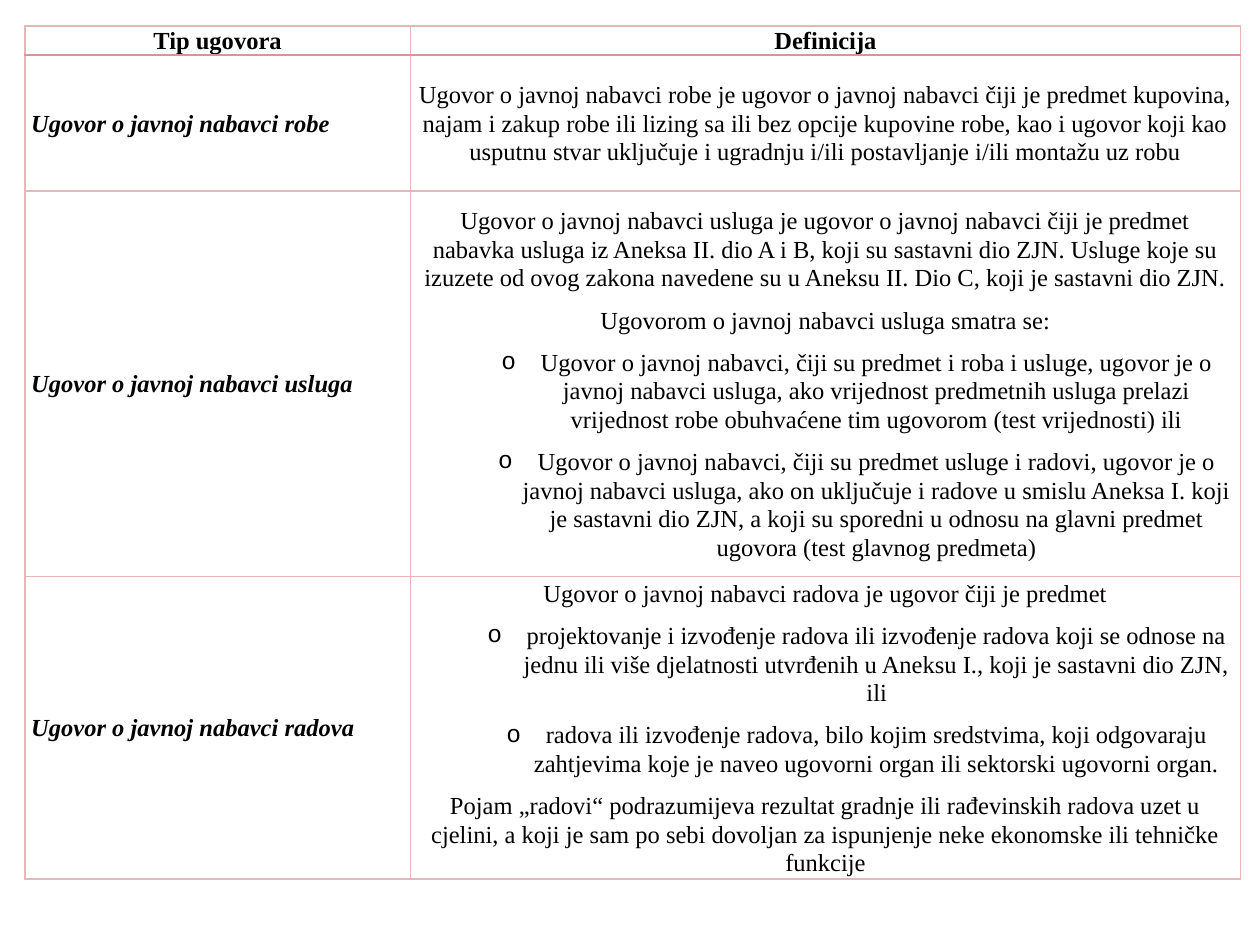
from lxml import etree
from pptx import Presentation
from pptx.dml.color import RGBColor
from pptx.enum import text
from pptx.oxml.ns import qn
from pptx.util import Pt

FONT = "Times New Roman"
BULLET_FONT = "Courier New"
PINK, ROSE, BLACK = "E5B8B7", "D99594", "000000"
COLUMN_WIDTHS = [220.3, 474.5]
ROW_HEIGHTS = [16.5, 77.8, 220.3, 172.8]
HEADINGS = ["Tip ugovora", "Definicija"]

# Each contract type has definition paragraphs: (is bulleted, wording).
CONTRACTS = [
    ("Ugovor o javnoj nabavci robe", [
        (False, "Ugovor o javnoj nabavci robe je ugovor o javnoj nabavci čiji je predmet kupovina, "
                "najam i zakup robe ili lizing sa ili bez opcije kupovine robe, kao i ugovor koji kao "
                "usputnu stvar uključuje i ugradnju i/ili postavljanje i/ili montažu uz robu"),
    ]),
    ("Ugovor o javnoj nabavci usluga", [
        (False, "Ugovor o javnoj nabavci usluga je ugovor o javnoj nabavci čiji je predmet nabavka "
                "usluga iz Aneksa II. dio A i B, koji su sastavni dio ZJN. Usluge koje su izuzete od "
                "ovog zakona navedene su u Aneksu II. Dio C, koji je sastavni dio ZJN."),
        (False, "Ugovorom o javnoj nabavci usluga smatra se:"),
        (True, "Ugovor o javnoj nabavci, čiji su predmet i roba i usluge, ugovor je o "
               "javnoj nabavci usluga, ako vrijednost predmetnih usluga prelazi "
               "vrijednost robe obuhvaćene tim ugovorom (test vrijednosti) ili"),
        (True, "Ugovor o javnoj nabavci, čiji su predmet usluge i radovi, ugovor je o "
               "javnoj nabavci usluga, ako on uključuje i radove u smislu Aneksa I. koji "
               "je sastavni dio ZJN, a koji su sporedni u odnosu na glavni predmet "
               "ugovora (test glavnog predmeta)"),
    ]),
    ("Ugovor o javnoj nabavci radova", [
        (False, "Ugovor o javnoj nabavci radova je ugovor čiji je predmet"),
        (True, "projektovanje i izvođenje radova ili izvođenje radova koji se odnose na "
               "jednu ili više djelatnosti utvrđenih u Aneksu I., koji je sastavni dio ZJN, ili"),
        (True, "radova ili izvođenje radova, bilo kojim sredstvima, koji odgovaraju "
               "zahtjevima koje je naveo ugovorni organ ili sektorski ugovorni organ."),
        (False, "Pojam „radovi“ podrazumijeva rezultat gradnje ili rađevinskih radova uzet u "
                "cjelini, a koji je sam po sebi dovoljan za ispunjenje neke ekonomske ili tehničke "
                "funkcije"),
    ]),
]


def color(value):
    return RGBColor.from_string(value)


def add_border(cell, side, value, width):
    """Draw one cell edge; side is L, R, T or B."""
    line = etree.SubElement(cell._tc.get_or_add_tcPr(), qn(f"a:ln{side}"), w=str(Pt(width)))
    fill = etree.SubElement(line, qn("a:solidFill"))
    etree.SubElement(fill, qn("a:srgbClr"), val=value)


def add_bullet(paragraph):
    properties = paragraph._p.get_or_add_pPr()
    properties.set("marL", str(Pt(58.5)))
    properties.set("indent", str(Pt(-22.5)))
    etree.SubElement(properties, qn("a:buFont"), typeface=BULLET_FONT)
    etree.SubElement(properties, qn("a:buChar"), char="o")


def format_cell(cell, row):
    cell.margin_left = cell.margin_right = Pt(3.6)
    cell.margin_top = cell.margin_bottom = Pt(0)
    cell.vertical_anchor = text.MSO_ANCHOR.MIDDLE
    heavy_side = {0: "B", 1: "T"}.get(row)
    for side in "LRTB":
        heavy = side == heavy_side
        add_border(cell, side, ROSE if heavy else PINK, 1.5 if heavy else 1)
    cell.fill.background()


def fill_cell(cell, paragraphs, align, bold=False, italic=False):
    frame = cell.text_frame
    for index, (bulleted, wording) in enumerate(paragraphs):
        paragraph = frame.add_paragraph() if index else frame.paragraphs[0]
        paragraph.alignment = align
        paragraph.line_spacing = 1.05
        paragraph.space_after = Pt(8)
        if bulleted:
            paragraph.level = 1
            add_bullet(paragraph)
        run = paragraph.add_run()
        run.text = wording
        font = run.font
        font.name, font.size = FONT, Pt(14)
        font.bold, font.italic = bold, italic
        font.color.rgb = color(BLACK)


def add_contract_table(slide, left, top, widths, heights):
    frame = slide.shapes.add_table(len(heights), len(widths), Pt(left), Pt(top),
                                   Pt(sum(widths)), Pt(sum(heights)))
    table = frame.table
    table.first_row = table.horz_banding = False
    for column, width in zip(table.columns, widths):
        column.width = Pt(width)
    for index, height in enumerate(heights):
        table.rows[index].height = Pt(height)
        for cell in table.rows[index].cells:
            format_cell(cell, index)

    center, justify = text.PP_ALIGN.CENTER, text.PP_ALIGN.JUSTIFY
    for column, heading in enumerate(HEADINGS):
        fill_cell(table.cell(0, column), [(False, heading)], center, bold=True)
    for row, (contract, definition) in enumerate(CONTRACTS, start=1):
        fill_cell(table.cell(row, 0), [(False, contract)], justify, bold=True, italic=True)
        fill_cell(table.cell(row, 1), definition, center)


def main():
    presentation = Presentation()
    presentation.slide_width, presentation.slide_height = Pt(720), Pt(540)
    slide = presentation.slides.add_slide(presentation.slide_layouts[6])
    add_contract_table(slide, 14.2, 15, COLUMN_WIDTHS, ROW_HEIGHTS)
    presentation.save("out.pptx")


if __name__ == "__main__":
    main()
